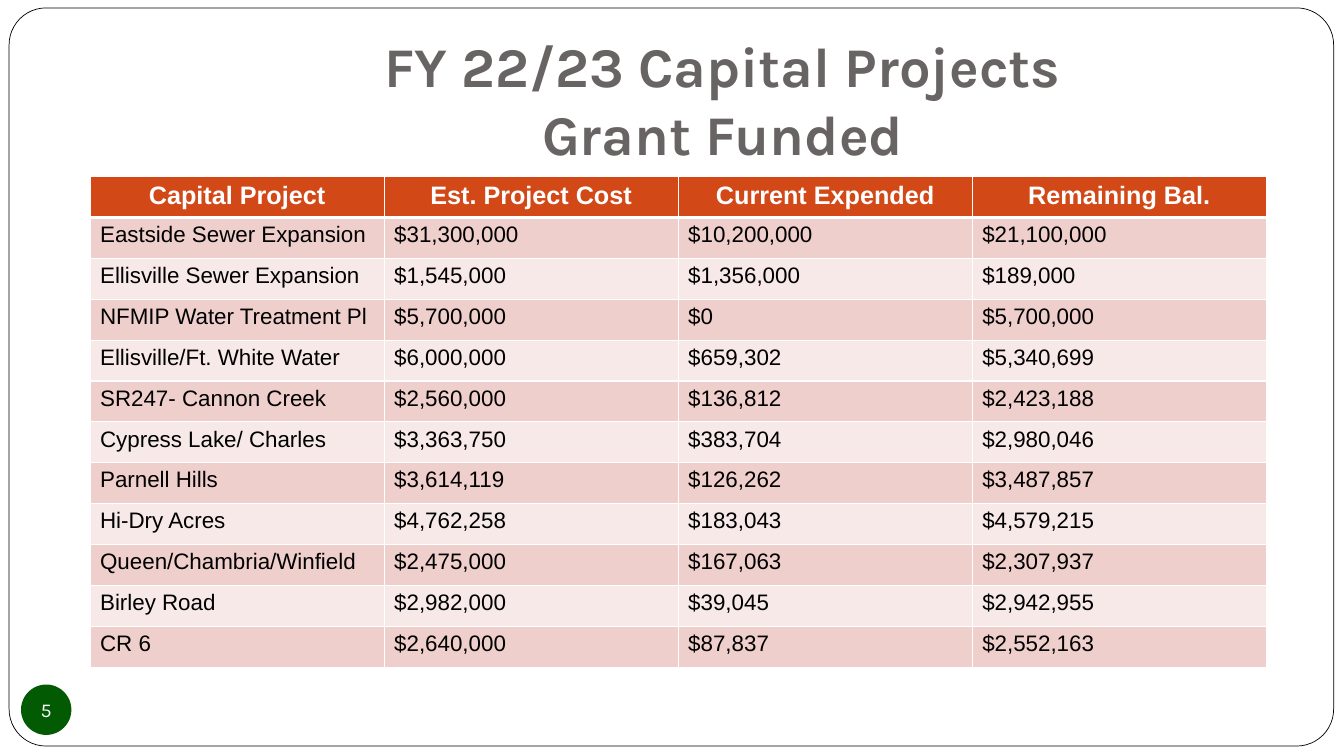
from lxml.etree import SubElement
from pptx import Presentation
from pptx.dml.color import RGBColor
from pptx.enum.shapes import MSO_SHAPE as Shape
from pptx.enum.text import MSO_ANCHOR as Anchor, PP_ALIGN as Align
from pptx.oxml.ns import qn
from pptx.util import Cm, Pt

PROJECTS = [
    ("Capital Project", "Est. Project Cost", "Current Expended", "Remaining Bal."),
    ("Eastside Sewer Expansion", "$31,300,000", "$10,200,000", "$21,100,000"),
    ("Ellisville Sewer Expansion", "$1,545,000", "$1,356,000", "$189,000"),
    ("NFMIP Water Treatment Pl", "$5,700,000", "$0", "$5,700,000"),
    ("Ellisville/Ft. White Water", "$6,000,000", "$659,302", "$5,340,699"),
    ("SR247- Cannon Creek", "$2,560,000", "$136,812", "$2,423,188"),
    ("Cypress Lake/ Charles", "$3,363,750", "$383,704", "$2,980,046"),
    ("Parnell Hills", "$3,614,119", "$126,262", "$3,487,857"),
    ("Hi-Dry Acres", "$4,762,258", "$183,043", "$4,579,215"),
    ("Queen/Chambria/Winfield", "$2,475,000", "$167,063", "$2,307,937"),
    ("Birley Road", "$2,982,000", "$39,045", "$2,942,955"),
    ("CR 6", "$2,640,000", "$87,837", "$2,552,163"),
]


def color(value):
    return RGBColor.from_string(value)


class SlideBuilder:
    heading_font = "Karla"
    body_font = "Arial"
    white = "FFFFFF"
    header_fill = "D34817"
    band_fills = ("F7E9E8", "EFCFCC")

    def __init__(self, slide):
        self.slide = slide

    def set_text(self, frame, text, size, font, ink, bold=False, align=Align.CENTER):
        frame.text = text
        paragraph = frame.paragraphs[0]
        paragraph.alignment = align
        paragraph.font.size = Pt(size)
        paragraph.font.name = font
        paragraph.font.bold = bold
        paragraph.font.color.rgb = color(ink)

    def shape(self, kind, left, top, width, height, fill):
        shape = self.slide.shapes.add_shape(kind, Cm(left), Cm(top), Cm(width), Cm(height))
        shape.shadow.inherit = False
        shape.fill.solid()
        shape.fill.fore_color.rgb = color(fill)
        shape.line.fill.background()
        return shape

    def frame(self, left, top, width, height):
        border = self.shape(Shape.ROUNDED_RECTANGLE, left, top, width, height, self.white)
        border.adjustments[0] = 0.05
        border.line.color.rgb = color("000000")
        border.line.width = Pt(0.5)

    def title(self, text, left, top, width, height):
        box = self.slide.shapes.add_textbox(Cm(left), Cm(top), Cm(width), Cm(height))
        box.text_frame.word_wrap = True
        box.text_frame.margin_bottom = Cm(0.25)
        box.text_frame.vertical_anchor = Anchor.BOTTOM
        self.set_text(box.text_frame, text, 40, self.heading_font, "696464", bold=True)

    def page_number(self, text, left, top, size):
        badge = self.shape(Shape.OVAL, left, top, size, size, "025A02")
        label = badge.text_frame
        label.word_wrap = False
        label.margin_left = label.margin_right = label.margin_top = label.margin_bottom = 0
        label.vertical_anchor = Anchor.MIDDLE
        self.set_text(label, text, 14, self.heading_font, self.white)

    def cell_borders(self, cell, top, bottom):
        properties = cell._tc.get_or_add_tcPr()
        edges = (("a:lnL", 1), ("a:lnR", 1), ("a:lnT", top), ("a:lnB", bottom))
        for position, (tag, width) in enumerate(edges):
            edge = SubElement(properties, qn(tag), w=str(Pt(width)))
            SubElement(SubElement(edge, qn("a:solidFill")), qn("a:srgbClr"), val=self.white)
            properties.insert(position, edge)

    def table(self, rows, left, top, column_width, row_height):
        column_count = len(rows[0])
        table = self.slide.shapes.add_table(
            len(rows), column_count, Cm(left), Cm(top),
            Cm(column_width * column_count), Cm(row_height * len(rows)),
        ).table
        for column in table.columns:
            column.width = Cm(column_width)
        for row_index, values in enumerate(rows):
            table.rows[row_index].height = Cm(row_height)
            is_header = row_index == 0
            fill = self.header_fill if is_header else self.band_fills[row_index % 2]
            for column_index, value in enumerate(values):
                cell = table.cell(row_index, column_index)
                cell.fill.solid()
                cell.fill.fore_color.rgb = color(fill)
                self.cell_borders(cell, 3 if row_index == 1 else 1, 3 if is_header else 1)
                if is_header:
                    self.set_text(cell.text_frame, value, 18, self.body_font, self.white, bold=True)
                else:
                    self.set_text(cell.text_frame, value, 16, self.body_font, "000000", align=Align.LEFT)


def main():
    presentation = Presentation()
    presentation.slide_width = Cm(33.87)
    presentation.slide_height = Cm(19.05)
    builder = SlideBuilder(presentation.slides.add_slide(presentation.slide_layouts[6]))
    builder.frame(0.23, 0.2, 33.38, 18.6)
    builder.title("FY 22/23 Capital Projects\vGrant Funded", 6.78, 0.76, 22.86, 3.68)
    builder.table(PROJECTS, 2.27, 4.45, 7.41, 1.03)
    builder.page_number("5", 0.53, 17.25, 1.27)
    presentation.save("out.pptx")


if __name__ == "__main__":
    main()
